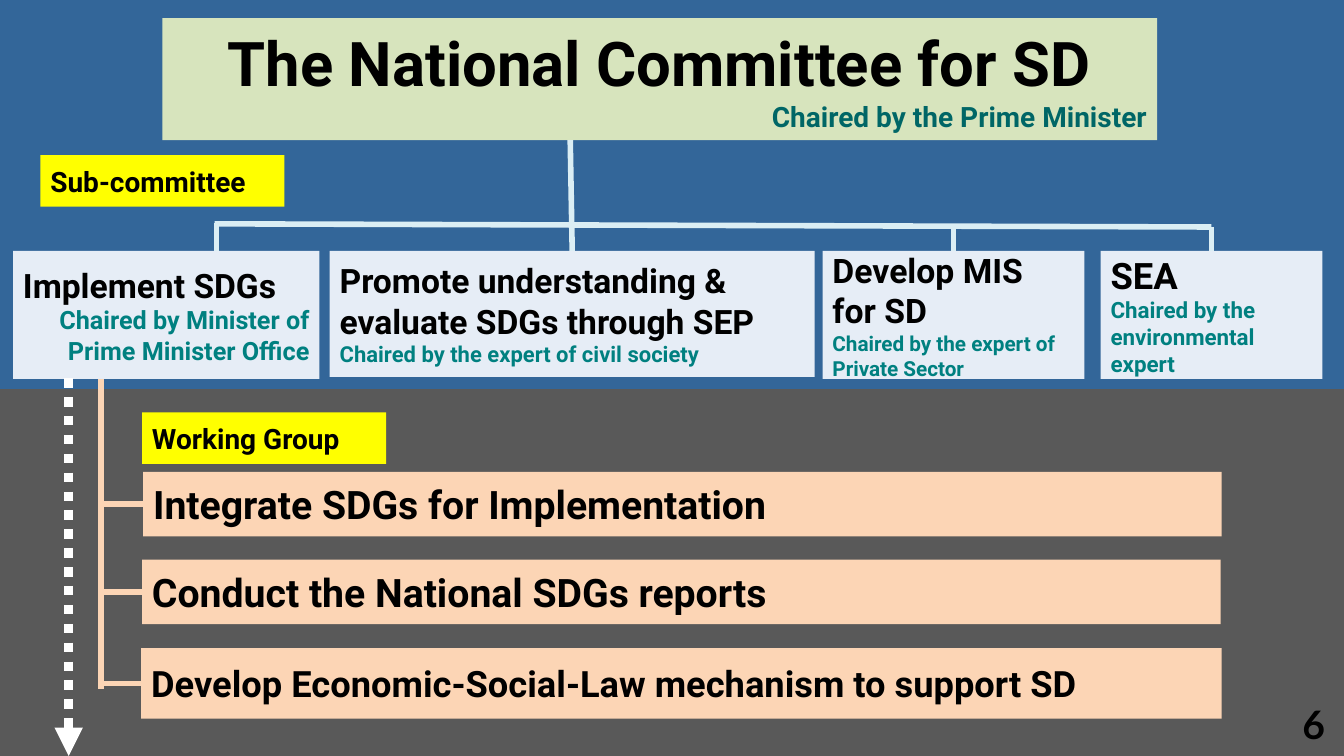
"""Builds the organisation slide of the National Committee for SD."""
from lxml.etree import SubElement
from pptx import Presentation
from pptx.dml.color import RGBColor
from pptx.enum.dml import MSO_LINE
from pptx.enum.shapes import MSO_CONNECTOR, MSO_SHAPE
from pptx.enum.text import MSO_ANCHOR, PP_ALIGN
from pptx.oxml.ns import qn
from pptx.util import Cm, Pt

COLORS = {
    "background": "262626", "upper": "336699", "lower": "595959",
    "title": "D7E4BD", "committee": "E6EDF6", "label": "FFFF00",
    "group": "FCD5B5", "rail": "DBEEF4", "arrow": "FFFFFF",
    "text": "000000", "chair": "008080", "prime": "006666",
}
LEFT, CENTER, RIGHT = PP_ALIGN.LEFT, PP_ALIGN.CENTER, PP_ALIGN.RIGHT
TOP_SIDE, LEFT_SIDE = 0, 1


def color(name):
    return RGBColor.from_string(COLORS[name])


class Chart:
    def __init__(self, slide, font="Roboto"):
        self.slide = slide
        self.font = font
        slide.background.fill.solid()
        slide.background.fill.fore_color.rgb = color("background")

    def add_lines(self, frame, lines, font=None):
        frame.word_wrap = True
        for index, (text, size, ink, align) in enumerate(lines):
            paragraph = frame.paragraphs[0] if index == 0 else frame.add_paragraph()
            paragraph.alignment = align
            run = paragraph.add_run()
            run.text = text
            run.font.name = font or self.font
            run.font.size = Pt(size)
            run.font.bold = True
            run.font.color.rgb = color(ink)

    def box(self, left, top, width, height, fill, lines=()):
        shape = self.slide.shapes.add_shape(
            MSO_SHAPE.RECTANGLE, Cm(left), Cm(top), Cm(width), Cm(height))
        shape.shadow.inherit = False
        shape.fill.solid()
        shape.fill.fore_color.rgb = color(fill)
        shape.line.fill.background()
        shape.text_frame.vertical_anchor = MSO_ANCHOR.MIDDLE
        self.add_lines(shape.text_frame, lines)
        return shape

    def line(self, x1, y1, x2, y2, ink, width=4):
        connector = self.slide.shapes.add_connector(
            MSO_CONNECTOR.STRAIGHT, Cm(x1), Cm(y1), Cm(x2), Cm(y2))
        connector.line.color.rgb = color(ink)
        connector.line.width = Pt(width)
        SubElement(connector._element.spPr, qn("a:effectLst"))
        return connector

    def dotted_arrow(self, x, top, bottom, ink):
        arrow = self.line(x, top, x, bottom, ink, 6.75)
        arrow.line.dash_style = MSO_LINE.ROUND_DOT
        SubElement(arrow._element.spPr.get_or_add_ln(), qn("a:tailEnd"), type="triangle")

    def branch_down(self, x, y, box, ink):
        self.line(x, y, x, box.top.cm, ink).end_connect(box, TOP_SIDE)

    def branch_right(self, x, box, ink):
        middle = (box.top + box.height / 2) / Cm(1)
        self.line(x, middle, box.left.cm, middle, ink).end_connect(box, LEFT_SIDE)

    def page_number(self, left, top, width, height, text):
        shape = self.slide.shapes.add_textbox(Cm(left), Cm(top), Cm(width), Cm(height))
        self.add_lines(shape.text_frame, [(text, 28, "text", CENTER)], "Lato")
        shape.text_frame.paragraphs[0].line_spacing = 0.9


def main():
    presentation = Presentation()
    presentation.slide_width, presentation.slide_height = Cm(33.87), Cm(19.05)
    chart = Chart(presentation.slides.add_slide(presentation.slide_layouts[6]))

    chart.box(0, 9.17, 33.87, 9.88, "lower")
    chart.box(0, 0, 33.87, 9.8, "upper")
    spine_x = 2.54
    chart.line(spine_x, 8.76, spine_x, 17.35, "group")

    chart.box(4.09, 0.46, 25.07, 3.07, "title", [
        ("The National Committee for SD", 44, "text", CENTER),
        ("Chaired by the Prime Minister", 20, "prime", RIGHT)])

    committees = [
        (0.33, 7.72, 3.23, "Implement SDGs", 24,
         "Chaired by Minister of Prime Minister Office", 18, RIGHT),
        (8.31, 12.22, 3.18, "Promote understanding & evaluate SDGs through SEP", 24,
         "Chaired by the expert of civil society", 15.7, LEFT),
        (20.73, 6.6, 3.23, "Develop MIS for SD", 24.1,
         "Chaired by the expert of Private Sector", 14.8, LEFT),
        (27.74, 5.59, 3.23, "SEA", 26,
         "Chaired by the environmental expert", 16, LEFT),
    ]
    implement, promote, mis, sea = [
        chart.box(left, 6.32, width, height, "committee", [
            (task, task_size, "text", LEFT), (chair, chair_size, "chair", align)])
        for left, width, height, task, task_size, chair, chair_size, align in committees]

    for left, top, text in [(1.02, 3.91, "Sub-committee"), (3.58, 10.39, "Working Group")]:
        chart.box(left, top, 6.15, 1.3, "label", [(text, 20, "text", LEFT)])

    chart.line(5.41, 5.64, 30.53, 5.72, "rail")
    chart.line(5.46, 5.61, 5.46, implement.top.cm, "rail")
    chart.branch_down(14.37, 3.53, promote, "rail")
    for box in (mis, sea):
        chart.branch_down((box.left + box.width / 2) / Cm(1), 5.72, box, "rail")

    groups = [
        (3.61, 11.89, 27.18, 1.63, "Integrate SDGs for Implementation", 28),
        (3.58, 14.1, 27.18, 1.63, "Conduct the National SDGs reports", 28),
        (3.56, 16.33, 27.23, 1.78,
         "Develop Economic-Social-Law mechanism to support SD", 25.9),
    ]
    for left, top, width, height, text, size in groups:
        group = chart.box(left, top, width, height, "group", [(text, size, "text", LEFT)])
        chart.branch_right(spine_x, group, "group")

    chart.dotted_arrow(1.73, 9.53, 19.05, "arrow")
    chart.page_number(32.41, 17.65, 1.4, 1.37, "6")
    presentation.save("out.pptx")


if __name__ == "__main__":
    main()
